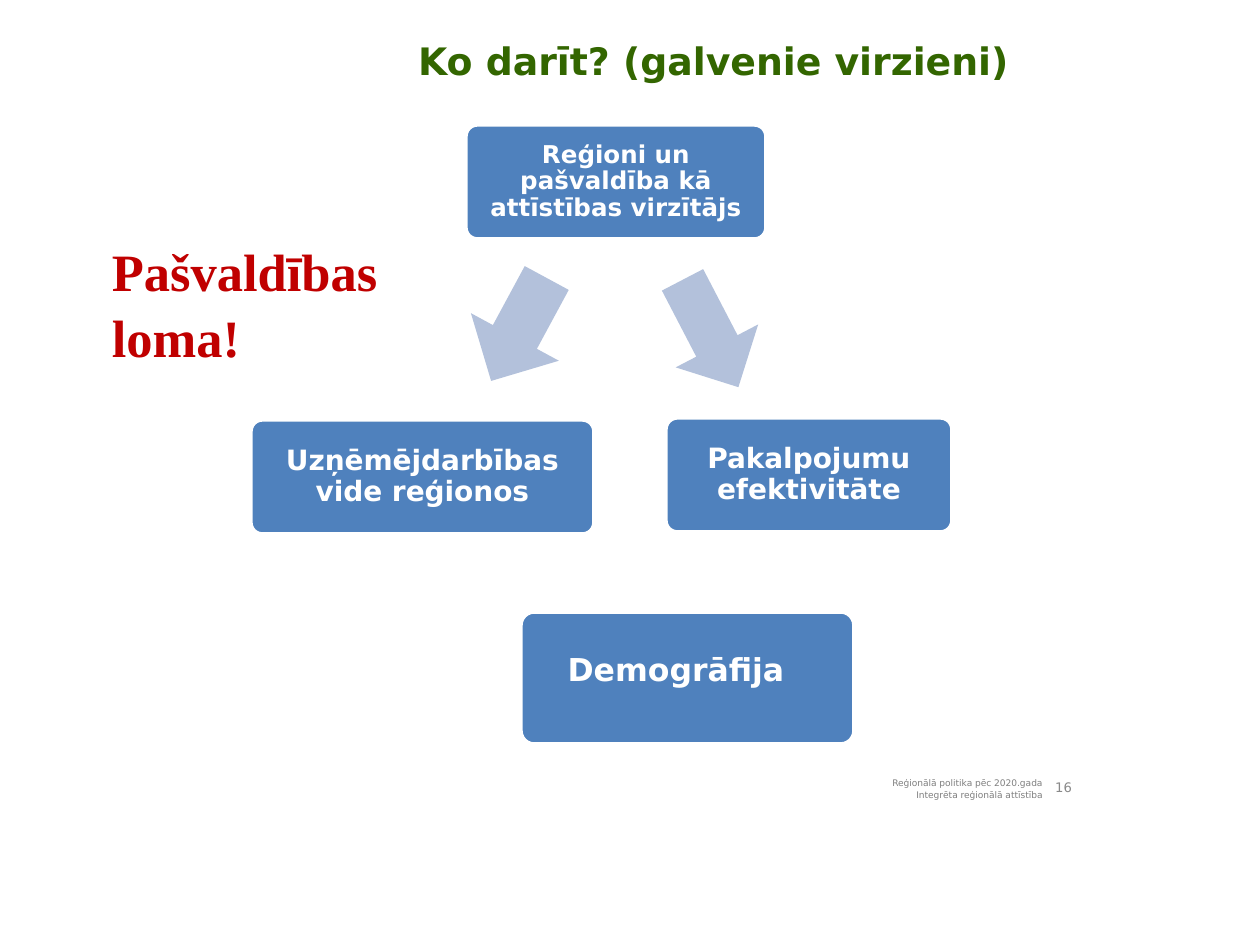
from dataclasses import dataclass

from pptx import Presentation
from pptx.dml.color import RGBColor
from pptx.enum import shapes, text
from pptx.util import Emu, Pt

PX = 914400 // 126
SANS = "DejaVu Sans"
WHITE = "FFFFFF"
BLUE = "4F81BD"
PALE_BLUE = "B3C1DB"


@dataclass(frozen=True)
class Box:
    left: int
    top: int
    width: int
    height: int

    def emu(self) -> list[Emu]:
        return [Emu(v * PX) for v in (self.left, self.top, self.width, self.height)]


@dataclass(frozen=True)
class Topic:
    label: str
    box: Box
    size: float
    margins: tuple[int, int, int, int] = (12, 12, 12, 12)


@dataclass(frozen=True)
class Arrow:
    box: Box
    rotation: float


TOPICS = [
    Topic("Reģioni un pašvaldība kā attīstības virzītājs", Box(466, 125, 300, 114), 14),
    Topic("Pakalpojumu efektivitāte", Box(666, 418, 286, 114), 16),
    Topic("Uzņēmējdarbības vide reģionos", Box(251, 420, 343, 114), 16),
    Topic("Demogrāfija", Box(521, 612, 333, 132), 18, (9, 9, 32, 22)),
]
ARROWS = [
    Arrow(Box(664, 273, 93, 121), 332.5),
    Arrow(Box(469, 271, 100, 117), 28.4),
]


def color(value: str) -> RGBColor:
    return RGBColor.from_string(value)


def write(shape, lines, *, size, fill, font=SANS, bold=False,
          align=text.PP_ALIGN.CENTER, anchor=text.MSO_ANCHOR.MIDDLE,
          margins=(13, 6, 13, 6), spacing=1.0, gap=0) -> None:
    frame = shape.text_frame
    frame.word_wrap = True
    frame.auto_size = text.MSO_AUTO_SIZE.NONE
    frame.vertical_anchor = anchor
    frame.margin_left, frame.margin_top, frame.margin_right, frame.margin_bottom = (
        Emu(m * PX) for m in margins)
    frame.text = lines
    for index, paragraph in enumerate(frame.paragraphs):
        paragraph.alignment = align
        paragraph.line_spacing = spacing
        paragraph.space_before = Pt(gap if index else 0)
        for run in paragraph.runs:
            run.font.name = font
            run.font.size = Pt(size)
            run.font.bold = bold
            run.font.color.rgb = color(fill)


def add_filled(slide, kind, box: Box, fill: str):
    shape = slide.shapes.add_shape(kind, *box.emu())
    shape.shadow.inherit = False
    shape.fill.solid()
    shape.fill.fore_color.rgb = color(fill)
    shape.line.fill.background()
    return shape


def draw_topic(slide, topic: Topic) -> None:
    shape = add_filled(slide, shapes.MSO_SHAPE.ROUNDED_RECTANGLE, topic.box, BLUE)
    shape.adjustments[0] = 0.1
    shape.line.color.rgb = color(WHITE)
    shape.line.width = Pt(2)
    write(shape, topic.label, size=topic.size, fill=WHITE, bold=True,
          margins=topic.margins, spacing=0.9)


def draw_arrow(slide, arrow: Arrow) -> None:
    shape = add_filled(slide, shapes.MSO_SHAPE.DOWN_ARROW, arrow.box, PALE_BLUE)
    shape.rotation = arrow.rotation


def add_text(slide, box: Box, lines: str, **style) -> None:
    write(slide.shapes.add_textbox(*box.emu()), lines, **style)


def main() -> None:
    deck = Presentation()
    deck.slide_width, deck.slide_height = Emu(1260 * PX), Emu(945 * PX)
    slide = deck.slides.add_slide(deck.slide_layouts[5])

    heading = slide.shapes.title
    heading.left, heading.top, heading.width, heading.height = Box(372, 28, 683, 65).emu()
    write(heading, "Ko darīt? (galvenie virzieni)", size=21.6, fill="336600", bold=True)

    for topic in TOPICS:
        draw_topic(slide, topic)
    for arrow in ARROWS:
        draw_arrow(slide, arrow)

    add_text(slide, Box(99, 230, 352, 160), "Pašvaldības loma!", size=30, fill="C00000",
             font="Times New Roman", bold=True, align=text.PP_ALIGN.LEFT,
             anchor=text.MSO_ANCHOR.TOP, spacing=1.05)
    add_text(slide, Box(1040, 771, 45, 32), "16", size=7.5, fill="898989",
             align=text.PP_ALIGN.RIGHT)
    add_text(slide, Box(675, 772, 378, 32),
             "Reģionālā politika pēc 2020.gada\nIntegrēta reģionālā attīstība",
             size=5.2, fill="808080", align=text.PP_ALIGN.RIGHT,
             anchor=text.MSO_ANCHOR.TOP, margins=(10, 5, 10, 5), gap=1)

    deck.save("out.pptx")


if __name__ == "__main__":
    main()
